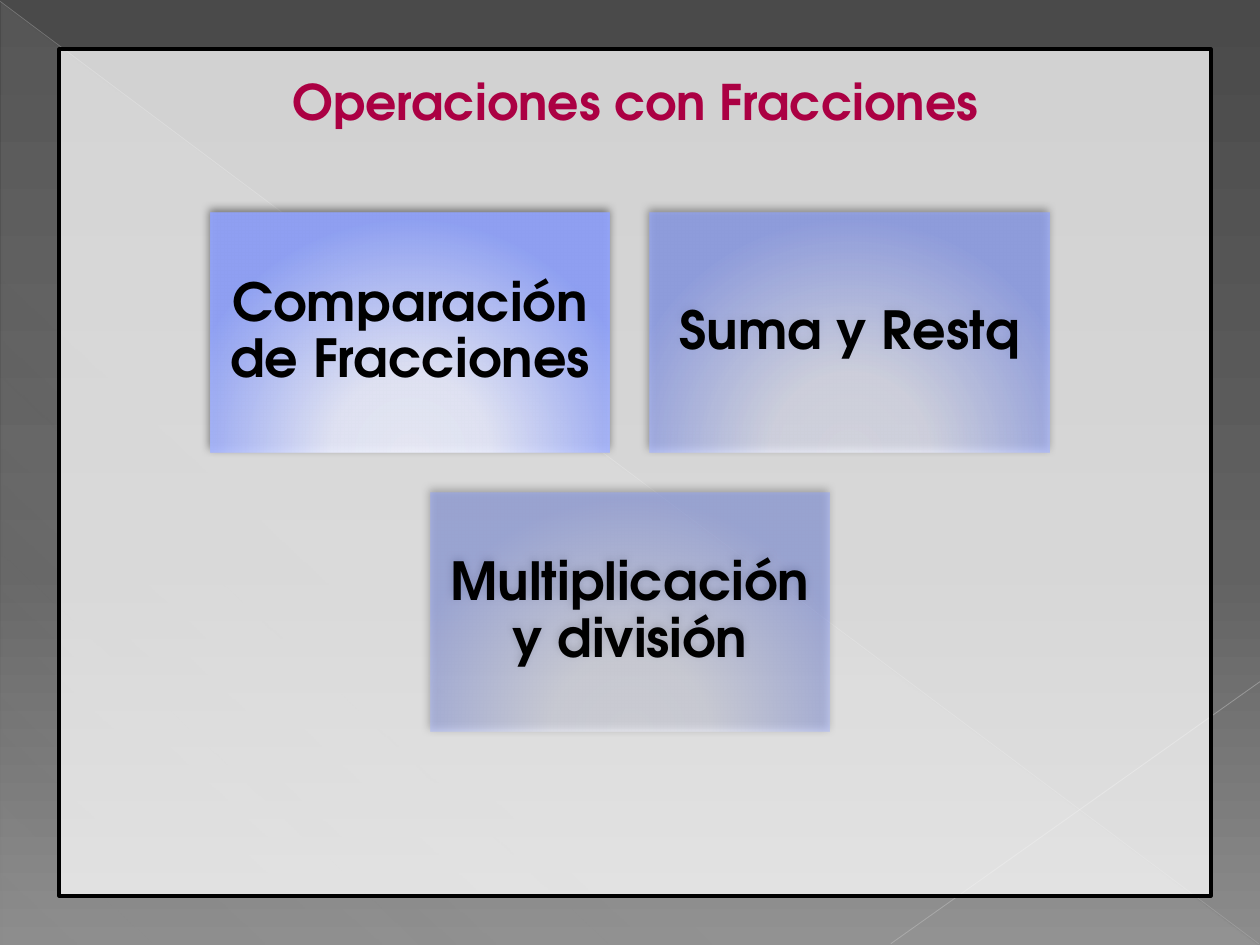
from dataclasses import dataclass
from pptx import Presentation
from pptx.dml.color import RGBColor
from pptx.enum.shapes import MSO_CONNECTOR as Link, MSO_SHAPE as Kind
from pptx.enum.text import MSO_ANCHOR as Anchor, MSO_AUTO_SIZE as Fit, PP_ALIGN as Align
from pptx.oxml import parse_xml
from pptx.oxml.ns import nsdecls, qn
from pptx.util import Inches, Pt

WIDE, HIGH = 10, 7.5
FONT = "TeX Gyre Adventor"
CARD_W, CARD_H, GAP, TOP = 3.17, 1.9, 0.32, 1.69


@dataclass
class Card:
    text: str
    row: int
    alpha: int


@dataclass
class Ray:
    start: tuple[float, float]
    end: tuple[float, float]
    color: str
    width: float
    alpha: int


CARDS = [
    Card("Comparación de Fracciones", 0, 90),
    Card("Suma y Restq", 0, 70),
    Card("Multiplicación y división", 1, 50),
]
RAYS = [
    Ray((0, 0.01), (9.99, 7.49), "BFBFBF", 0.39, 35),
    Ray((10, 5.41), (7.07, 7.49), "C6C6C6", 0.47, 45),
]
LINEAR = '<a:lin ang="{}" scaled="0"/>'
GLOW = '<a:path path="circle"><a:fillToRect l="50000" t="155000" r="50000" b="-55000"/></a:path>'


def rgb(code: str) -> RGBColor:
    return RGBColor.from_string(code)


def node(xml: str):
    """Parse one element of the drawing namespace."""
    cut = min(i for i, c in enumerate(xml) if c in " />")
    return parse_xml(f"{xml[:cut]} {nsdecls('a')}{xml[cut:]}")


def fade(props, alpha: int) -> None:
    """Make the solid colour inside props partly transparent."""
    color = next(props.iter(qn("a:srgbClr")))
    color.append(node(f'<a:alpha val="{alpha * 1000}"/>'))


def blend(props, stops: list[tuple[int, str, int]], course: str) -> None:
    """Swap the solid fill in props for a gradient of (place, colour, alpha)."""
    marks = "".join(
        f'<a:gs pos="{p * 1000}"><a:srgbClr val="{c}"><a:alpha val="{a * 1000}"/></a:srgbClr></a:gs>'
        for p, c, a in stops)
    grad = node(f'<a:gradFill rotWithShape="1"><a:gsLst>{marks}</a:gsLst>{course}</a:gradFill>')
    props.replace(props.find(qn("a:solidFill")), grad)


def write(shape, text: str, *, size: float, color: str, inset=(0.1, 0.05),
          anchor=Anchor.MIDDLE, fit=Fit.NONE, spacing: float = 1.0) -> None:
    frame = shape.text_frame
    frame.word_wrap, frame.auto_size, frame.vertical_anchor = True, fit, anchor
    frame.margin_left = frame.margin_right = Inches(inset[0])
    frame.margin_top = frame.margin_bottom = Inches(inset[1])
    para = frame.paragraphs[0]
    para.alignment, para.line_spacing = Align.CENTER, spacing
    run = para.add_run()
    run.text = text
    font = run.font
    font.name, font.size, font.bold = FONT, Pt(size), True
    font.color.rgb = rgb(color)


def block(slide, kind, x: float, y: float, w: float, h: float, fill: str = "FFFFFF"):
    shape = slide.shapes.add_shape(kind, *map(Inches, (x, y, w, h)))
    shape.shadow.inherit = False
    shape.fill.solid()
    shape.fill.fore_color.rgb = rgb(fill)
    shape.line.fill.background()
    return shape


def draw_ray(slide, ray: Ray) -> None:
    line = slide.shapes.add_connector(Link.STRAIGHT, *map(Inches, ray.start + ray.end))
    line.line.color.rgb = rgb(ray.color)
    line.line.width = Pt(ray.width)
    props = line._element.spPr
    fade(props, ray.alpha)
    props.append(node("<a:effectLst/>"))


def draw_card(slide, card: Card) -> None:
    # Each row is centred on the slide
    peers = [c for c in CARDS if c.row == card.row]
    span = len(peers) * (CARD_W + GAP) - GAP
    x = (WIDE - span) / 2 + peers.index(card) * (CARD_W + GAP)
    y = TOP + card.row * (CARD_H + GAP)
    shape = block(slide, Kind.RECTANGLE, x, y, CARD_W, CARD_H)
    props = shape._element.spPr
    tones = [(0, "F0F2FF"), (34, "EAEDFF"), (100, "92A5FF")]
    blend(props, [(p, c, card.alpha) for p, c in tones], GLOW)
    props.find(qn("a:effectLst")).append(node(
        f'<a:outerShdw blurRad="{Pt(5)}" dist="{Pt(2)}" dir="{245 * 60000}" rotWithShape="0">'
        '<a:srgbClr val="000000"><a:alpha val="50000"/></a:srgbClr></a:outerShdw>'))
    write(shape, card.text, size=30, color="000000", inset=(0.12, 0.12), spacing=0.9)


def main() -> None:
    deck = Presentation()
    deck.slide_width, deck.slide_height = Inches(WIDE), Inches(HIGH)
    slide = deck.slides.add_slide(deck.slide_layouts[5])

    # Backdrop
    slide.background.fill.solid()
    back = next(slide._element.iter(qn("p:bgPr")))
    blend(back, [(0, "4A4A4A", 100), (60, "626262", 100), (100, "8C8C8C", 100)],
          LINEAR.format(90 * 60000))
    wedge = block(slide, Kind.RIGHT_TRIANGLE, 0.01, 0.02, 9.98, 7.48)
    blend(wedge._element.spPr, [(0, "D2D2D2", 10), (70, "D2D2D2", 8), (100, "D2D2D2", 1)],
          LINEAR.format(133 * 60000))
    for ray in RAYS:
        draw_ray(slide, ray)

    # Panel
    panel = block(slide, Kind.RECTANGLE, 0.47, 0.39, 9.14, 6.72)
    fade(panel._element.spPr, 75)
    panel.line.color.rgb = rgb("000000")
    panel.line.width = Pt(2)

    # Title, raised above the panel
    title = slide.shapes.title
    title.left, title.top, title.width, title.height = map(Inches, (0.67, 0.52, 8.74, 0.57))
    write(title, "Operaciones con Fracciones", size=28, color="AB0043",
          anchor=Anchor.TOP, fit=Fit.SHAPE_TO_FIT_TEXT)
    slide.shapes._spTree.append(title._element)

    # Cards
    for card in CARDS:
        draw_card(slide, card)

    deck.save("out.pptx")


if __name__ == "__main__":
    main()
